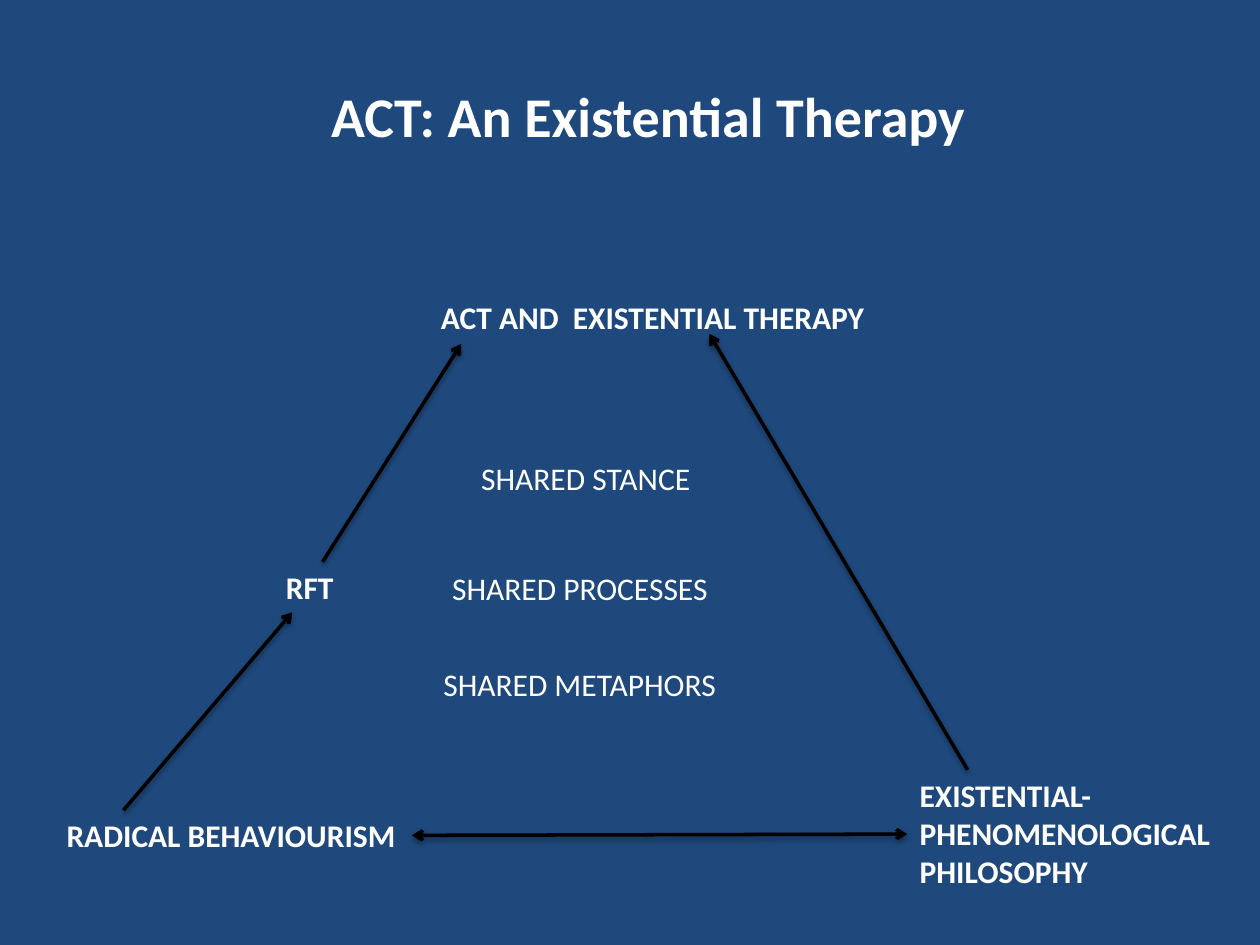
from dataclasses import dataclass

from lxml import etree
from pptx import Presentation
from pptx.dml.color import RGBColor
from pptx.enum.shapes import MSO_CONNECTOR
from pptx.enum.text import MSO_AUTO_SIZE, PP_ALIGN
from pptx.oxml import parse_xml
from pptx.oxml.ns import nsdecls, qn
from pptx.util import Inches, Pt

LEFT, CENTER = PP_ALIGN.LEFT, PP_ALIGN.CENTER
STRAIGHT = MSO_CONNECTOR.STRAIGHT
FIT_SHAPE = MSO_AUTO_SIZE.SHAPE_TO_FIT_TEXT


@dataclass(frozen=True)
class Theme:
    font: str = "Calibri"
    background: RGBColor = RGBColor(0x1F, 0x49, 0x7D)
    text: RGBColor = RGBColor(0xFF, 0xFF, 0xFF)
    line: RGBColor = RGBColor(0, 0, 0)
    title_size: Pt = Pt(32)
    label_size: Pt = Pt(18)
    line_width: Pt = Pt(2)


theme = Theme()
SHADOW = (
    f'<a:effectLst {nsdecls("a")}>'
    '<a:outerShdw blurRad="40000" dist="20000" dir="5400000" rotWithShape="0">'
    '<a:srgbClr val="000000"><a:alpha val="38000"/></a:srgbClr>'
    "</a:outerShdw></a:effectLst>"
)


def add_label(box, lines, size=theme.label_size, bold=True, align=LEFT):
    sp = s.shapes.add_textbox(*(Inches(v) for v in box))
    tf = sp.text_frame
    tf.word_wrap = True
    tf.auto_size = FIT_SHAPE
    tf.text = lines
    for p in tf.paragraphs:
        p.alignment = align
        p.font.name = theme.font
        p.font.size = size
        p.font.bold = bold
        p.font.color.rgb = theme.text


def add_arrow(start, end, ends=("tailEnd",)):
    sp = s.shapes.add_connector(STRAIGHT, *(Inches(v) for v in start + end))
    sp.line.color.rgb = theme.line
    sp.line.width = theme.line_width
    ln = sp.line._get_or_add_ln()
    for name in ends:
        etree.SubElement(ln, qn(f"a:{name}"), type="arrow")
    sp._element.spPr.append(parse_xml(SHADOW))


prs = Presentation()
prs.slide_width, prs.slide_height = Inches(10), Inches(7.5)
s = prs.slides.add_slide(prs.slide_layouts[6])
s.background.fill.solid()
s.background.fill.fore_color.rgb = theme.background

# Title
add_label((1.35, 0.6, 7.59, 0.64), "ACT: An Existential Therapy",
          size=theme.title_size, align=CENTER)

# Corners of the triangle, and the step on its left side
add_label((2.54, 2.32, 5.28, 0.4), "ACT AND  EXISTENTIAL THERAPY", align=CENTER)
add_label((2.17, 4.46, 0.79, 0.4), "RFT")
add_label((0.43, 6.43, 2.83, 0.4), "RADICAL BEHAVIOURISM")
add_label((7.2, 6.11, 2.52, 1.01), "EXISTENTIAL-\nPHENOMENOLOGICAL PHILOSOPHY")

# Sides of the triangle
add_arrow((0.98, 6.43), (2.32, 4.86))
add_arrow((2.56, 4.46), (3.66, 2.73))
add_arrow((7.68, 6.11), (5.63, 2.65))
add_arrow((3.27, 6.63), (7.2, 6.62), ends=("headEnd", "tailEnd"))

# Shared ground inside the triangle
for left, top, width, topic in (
    (3.72, 3.59, 1.89, "STANCE"),
    (3.49, 4.47, 2.34, "PROCESSES"),
    (3.42, 5.23, 2.39, "METAPHORS"),
):
    add_label((left, top, width, 0.4), f"SHARED {topic}", bold=False)

prs.save("out.pptx")
